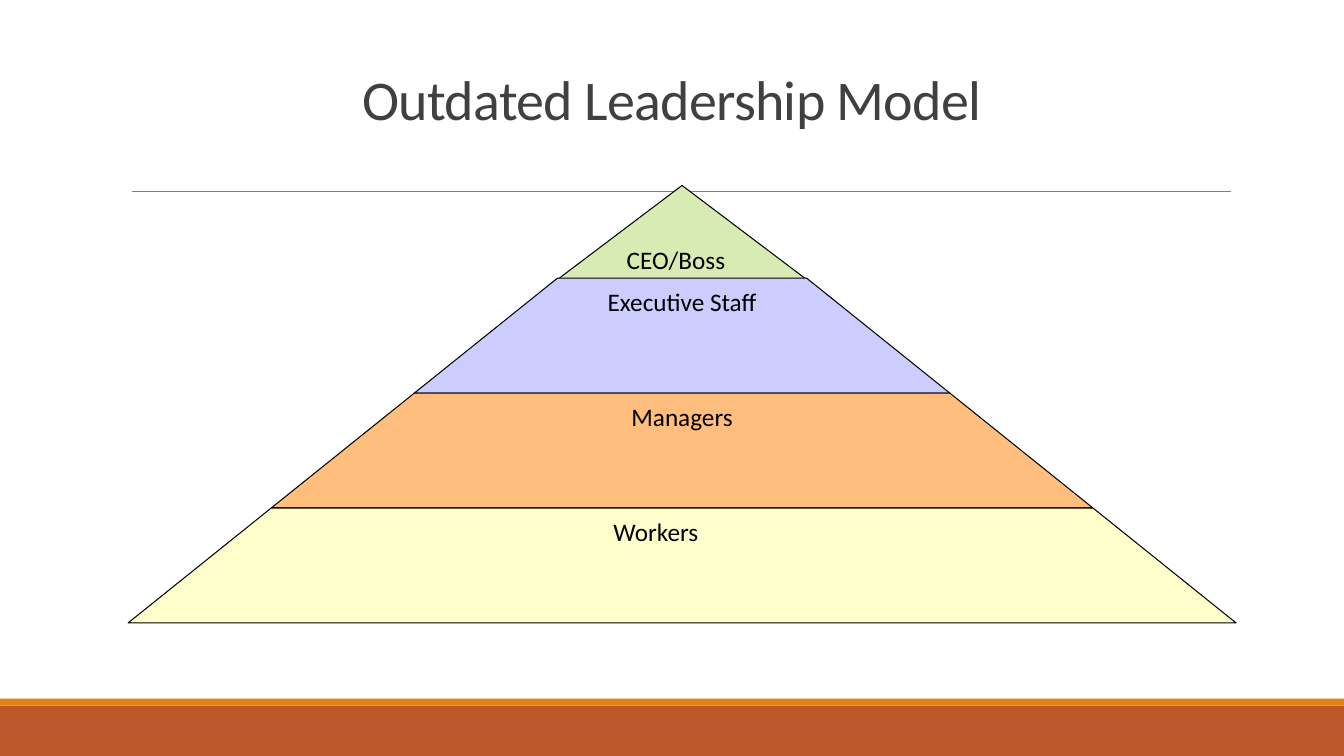
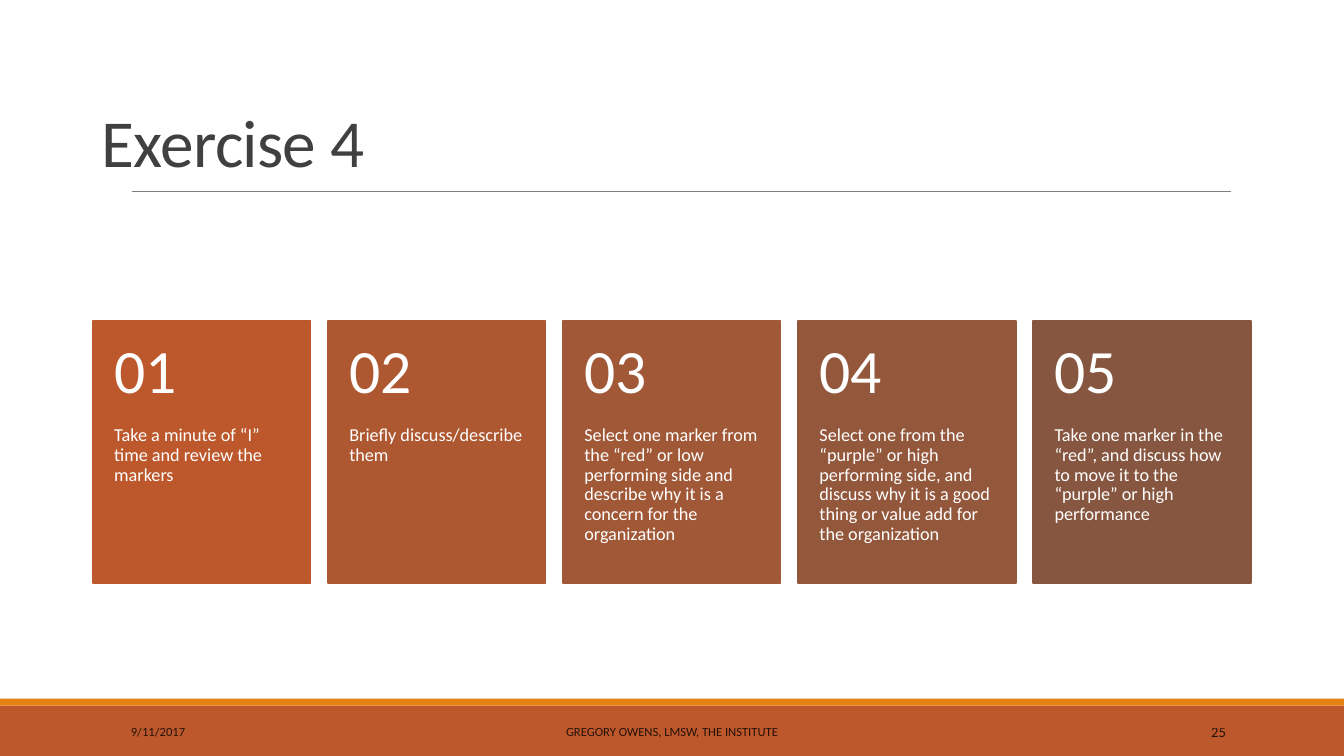
"""Build a leadership pyramid slide and a five-step exercise slide."""
import lxml.etree
import pptx
import pptx.dml.color
import pptx.enum.shapes
import pptx.enum.text
import pptx.oxml.ns
import pptx.util

RGBColor = pptx.dml.color.RGBColor
ALIGN = pptx.enum.text.PP_ALIGN
ANCHOR = pptx.enum.text.MSO_ANCHOR
Pt = pptx.util.Pt

SLIDE_WIDTH = pptx.util.Inches(13.33)
SLIDE_HEIGHT = pptx.util.Inches(7.5)
COLUMN = SLIDE_WIDTH / 100
ROW = SLIDE_HEIGHT / 100

FONT = "Calibri"
BLACK = RGBColor(0x00, 0x00, 0x00)
WHITE = RGBColor(0xFF, 0xFF, 0xFF)
TITLE_GREY = RGBColor(0x40, 0x40, 0x40)
RULE_GREY = RGBColor(0x80, 0x80, 0x80)
RUST = RGBColor(0xBD, 0x58, 0x2C)
ORANGE = RGBColor(0xE4, 0x83, 0x12)
BOSS_GREEN = RGBColor(0xD8, 0xEB, 0xB3)
STAFF_LILAC = RGBColor(0xCC, 0xCC, 0xFF)
MANAGER_ORANGE = RGBColor(0xFF, 0xBE, 0x7D)
WORKER_YELLOW = RGBColor(0xFF, 0xFF, 0xCC)
CARD_BROWNS = (
    RUST,
    RGBColor(0xAE, 0x58, 0x32),
    RGBColor(0xA0, 0x58, 0x37),
    RGBColor(0x93, 0x57, 0x3C),
    RGBColor(0x86, 0x56, 0x40),
)

PYRAMID_CENTRE = 50.75
TIER_TOP, TIER_HEIGHT = 36.8, 15.2
TIER_HALF, TIER_SPREAD = 9.27, 10.65
LOWER_TIERS = (
    ("Executive Staff", STAFF_LILAC, 0),
    ("Managers", MANAGER_ORANGE, 0),
    ("Workers", WORKER_YELLOW, 3.9),
)

CARD_LEFT, CARD_PITCH, CARD_WIDTH = 6.9, 17.49, 16.2
CARD_TOP, CARD_HEIGHT, NUMBER_SHARE = 42.5, 34.6, 0.4
TASKS = (
    "Take a minute of “I” time and review the markers",
    "Briefly discuss/describe them",
    "Select one marker from the “red” or low performing side and describe why it is a "
    "concern for the organization",
    "Select one from the “purple” or high performing side, and discuss why it is a good "
    "thing or value add for the organization",
    "Take one marker in the “red”, and discuss how to move it to the “purple” or high "
    "performance",
)

FOOTER_PARTS = (
    ("9/11/2017", 9, 20.25, 9, ALIGN.LEFT),
    ("GREGORY OWENS, LMSW, THE INSTITUTE", 30.23, 39.53, 9, ALIGN.CENTER),
    ("25", 81.23, 10.73, 10.5, ALIGN.RIGHT),
)


def across(share):
    return round(share * COLUMN)


def down(share):
    return round(share * ROW)


def box(left, top, width, height):
    return across(left), down(top), across(width), down(height)


def apply(target, values):
    for attribute, value in values.items():
        setattr(target, attribute, value)


def margins(left=0, top=0, right=0, bottom=0):
    return {
        "margin_left": across(left),
        "margin_top": down(top),
        "margin_right": across(right),
        "margin_bottom": down(bottom),
    }


def write(frame, text, size, color, frame_values, paragraph_values):
    apply(frame, {"word_wrap": True, "auto_size": pptx.enum.text.MSO_AUTO_SIZE.NONE})
    apply(frame, frame_values)
    paragraph = frame.paragraphs[0]
    apply(paragraph, paragraph_values)
    run = paragraph.add_run()
    run.text = text
    apply(run.font, {"name": FONT, "size": Pt(size)})
    run.font.color.rgb = color
    return run


def paint(shape, fill, outline=None, weight=0.75):
    shape.shadow.inherit = False
    shape.fill.solid()
    shape.fill.fore_color.rgb = fill
    if outline is None:
        shape.line.fill.background()
    else:
        shape.line.color.rgb = outline
        shape.line.width = Pt(weight)


def add_rectangle(slide, area, fill, outline=None, weight=0.75):
    rectangle = slide.shapes.add_shape(pptx.enum.shapes.MSO_SHAPE.RECTANGLE, *area)
    paint(rectangle, fill, outline, weight)
    return rectangle


def add_rule(slide, left, right, top):
    rule = slide.shapes.add_connector(
        pptx.enum.shapes.MSO_CONNECTOR.STRAIGHT,
        across(left), down(top), across(right), down(top),
    )
    rule.line.color.rgb = RULE_GREY
    rule.line.width = Pt(0.5)
    properties = rule.element.find(pptx.oxml.ns.qn("p:spPr"))
    lxml.etree.SubElement(properties, pptx.oxml.ns.qn("a:effectLst"))
    return rule


def decorate_layout(layout, slide):
    """Draw the shared bands and rule, then hand them to the layout."""
    decorations = (
        add_rectangle(slide, box(0, 93.33, 100, 6.67), RUST),
        add_rectangle(slide, box(0, 92.4, 100, 0.93), ORANGE),
        add_rule(slide, 9.83, 91.6, 25.33),
    )
    for decoration in decorations:
        layout.shapes.element.append(decoration.element)


def set_title(slide, text, area, size, alignment):
    title = slide.shapes.title
    apply(title, dict(zip(("left", "top", "width", "height"), area)))
    run = write(
        title.text_frame, text, size, TITLE_GREY,
        {"vertical_anchor": ANCHOR.BOTTOM},
        {"alignment": alignment, "line_spacing": 0.85},
    )
    run.font._element.set("spc", "-50")


def add_text(slide, area, *content):
    return write(slide.shapes.add_textbox(*area).text_frame, *content)


def add_tier(slide, label, fill, top, bottom, half_top, half_bottom, label_drop, label_shift):
    corners = [
        (across(PYRAMID_CENTRE + half), down(level))
        for half, level in (
            (-half_top, top), (half_top, top), (half_bottom, bottom), (-half_bottom, bottom),
        )
    ]
    outline = slide.shapes.build_freeform(*corners[0])
    outline.add_line_segments(corners[1:], close=True)
    tier = outline.convert_to_shape()
    paint(tier, fill, BLACK)
    write(
        tier.text_frame, label, 18, BLACK,
        {"vertical_anchor": ANCHOR.TOP, **margins(top=label_drop, right=label_shift)},
        {"alignment": ALIGN.CENTER},
    )


def add_pyramid(slide):
    add_tier(slide, "CEO/Boss", BOSS_GREEN, 24.53, 37.47, 0, 9.64, 7.73, 0.9)
    for level, (label, fill, label_shift) in enumerate(LOWER_TIERS):
        top = TIER_TOP + level * TIER_HEIGHT
        half = TIER_HALF + level * TIER_SPREAD
        add_tier(
            slide, label, fill, top, top + TIER_HEIGHT, half, half + TIER_SPREAD,
            1.07, label_shift,
        )


def add_card(slide, index, task, fill):
    left = CARD_LEFT + index * CARD_PITCH
    number_height = CARD_HEIGHT * NUMBER_SHARE
    spacing = {"line_spacing": 0.9}
    add_rectangle(slide, box(left, CARD_TOP, CARD_WIDTH, CARD_HEIGHT), fill, fill, 1.25)
    add_text(
        slide, box(left, CARD_TOP + number_height, CARD_WIDTH, CARD_HEIGHT - number_height),
        task, 13, WHITE,
        {"vertical_anchor": ANCHOR.TOP, **margins(1.6, 0, 1.6, 4.8)}, spacing,
    )
    add_text(
        slide, box(left, CARD_TOP, CARD_WIDTH, number_height),
        f"{index + 1:02}", 44, WHITE,
        {"vertical_anchor": ANCHOR.MIDDLE, **margins(1.6, 2.4, 1.6, 2.4)}, spacing,
    )


def add_footer(slide):
    for text, left, width, size, alignment in FOOTER_PARTS:
        run = add_text(
            slide, box(left, 94.13, width, 5.33), text, size, BLACK,
            {"vertical_anchor": ANCHOR.MIDDLE}, {"alignment": alignment},
        )
        for tint in run.font._element.iter(pptx.oxml.ns.qn("a:srgbClr")):
            lxml.etree.SubElement(tint, pptx.oxml.ns.qn("a:alpha")).set("val", "80000")


def main():
    deck = pptx.Presentation()
    apply(deck, {"slide_width": SLIDE_WIDTH, "slide_height": SLIDE_HEIGHT})
    title_only = deck.slide_layouts.get_by_name("Title Only")

    model = deck.slides.add_slide(title_only)
    decorate_layout(title_only, model)
    set_title(model, "Outdated Leadership Model", box(0, 7.2, 100, 10.93), 40, ALIGN.CENTER)
    add_pyramid(model)

    exercise = deck.slides.add_slide(title_only)
    set_title(exercise, "Exercise 4", box(6.83, 5.33, 86.33, 19.33), 48, ALIGN.LEFT)
    for index, (task, fill) in enumerate(zip(TASKS, CARD_BROWNS)):
        add_card(exercise, index, task, fill)
    add_footer(exercise)

    deck.save("out.pptx")


if __name__ == "__main__":
    main()
